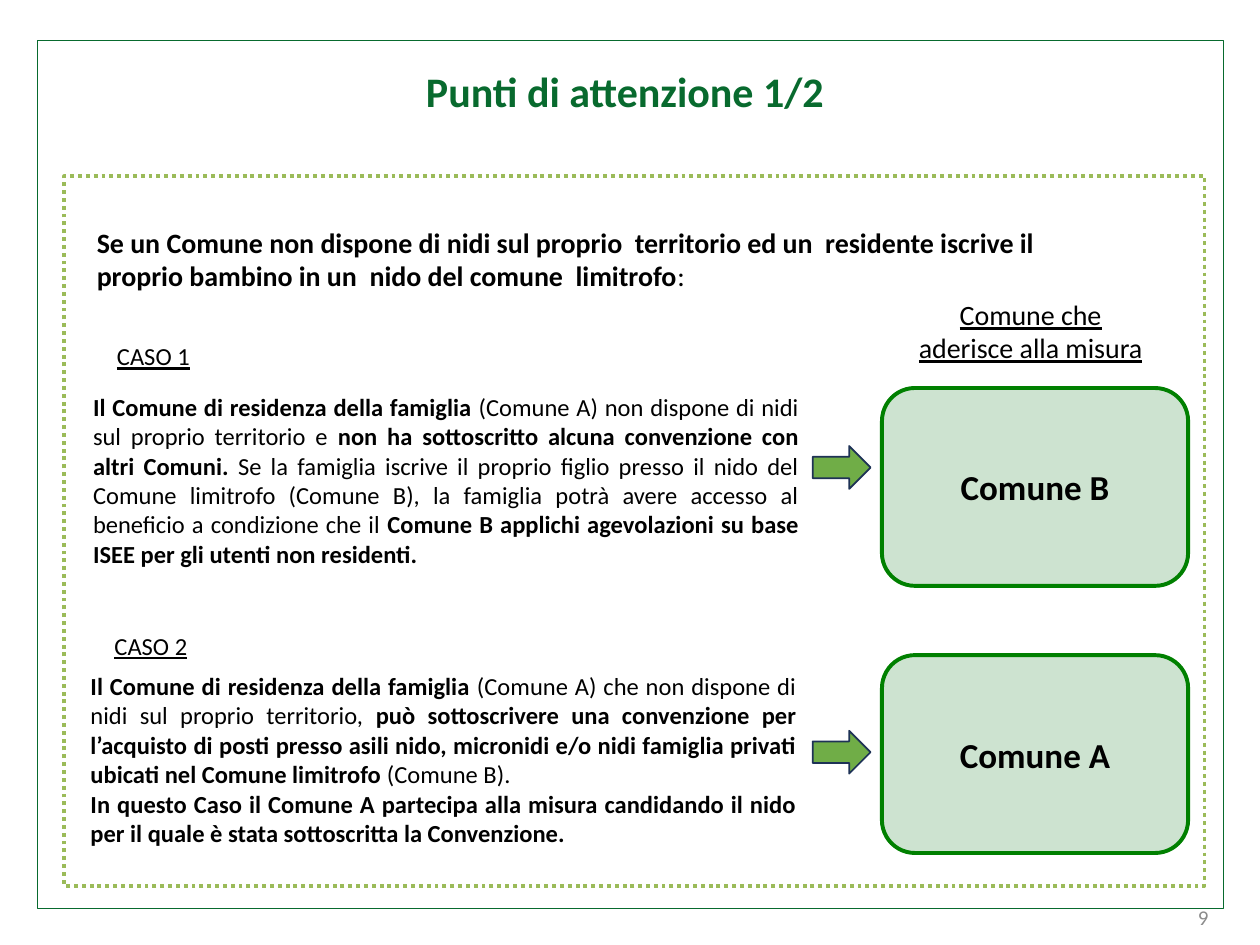
from pptx import Presentation
from pptx.dml.color import RGBColor
from pptx.enum import dml, shapes, text
from pptx.oxml.ns import qn
from pptx.util import Inches, Pt
from lxml import etree

# Content: runs are (text, bold)
TITLE = "Punti di attenzione 1/2"
PAGE_NUMBER = "9"
PREMISE = [
    ("Se un Comune non dispone di nidi sul proprio  territorio ed un  residente iscrive "
     "il  proprio bambino in un  nido del comune  limitrofo", True),
    (":", False),
]
OUTCOME_HEADING = "Comune che aderisce alla misura"
CASES = [
    {
        "label": "CASO 1", "outcome": "Comune B", "gap": 12,
        "text_at": (0.44, 2.66, 6, 1.92), "arrow_top": 3.54, "outcome_top": 3.08,
        "paragraphs": [[
            ("Il Comune di residenza della famiglia", True),
            (" (Comune A) non dispone di nidi sul proprio territorio e ", False),
            ("non ha sottoscritto alcuna convenzione con altri Comuni.", True),
            (" Se la famiglia iscrive il proprio figlio presso il nido del Comune limitrofo "
             "(Comune B), la famiglia potrà avere accesso al beneficio a condizione che il ", False),
            ("Comune B applichi agevolazioni su base ISEE per gli utenti non residenti.", True),
        ]],
    },
    {
        "label": "CASO 2", "outcome": "Comune A", "gap": 6,
        "text_at": (0.42, 4.96, 6, 1.83), "arrow_top": 5.8, "outcome_top": 5.2,
        "paragraphs": [
            [
                ("Il Comune di residenza della famiglia", True),
                (" (Comune A) che non dispone di nidi sul proprio territorio, ", False),
                ("può sottoscrivere una convenzione per l’acquisto di posti presso asili nido, "
                 "micronidi e/o nidi famiglia privati ubicati nel Comune limitrofo", True),
                (" (Comune B).", False),
            ],
            [("In questo Caso il Comune A partecipa alla misura candidando il nido "
              "per il quale è stata sottoscritta la Convenzione.", True)],
        ],
    },
]

THEME = {
    "font": "Calibri",
    "title": "086A2E", "text": "000000", "number": "8C8C8C",
    "white": "FFFFFF", "dotted": "9BBB59",
    "outcome_fill": "077515", "outcome_line": "008000",
    "arrow_fill": "70AD47", "arrow_line": "1E3256",
    "title_size": 24, "outcome_size": 20, "lead_size": 16, "case_size": 14, "number_size": 12,
}
SHAPE = shapes.MSO_SHAPE
ALIGN = text.PP_ALIGN
ANCHOR = text.MSO_ANCHOR
BODY_INDENT, LABEL_INDENT = 0.2, 0.39

presentation = Presentation()
presentation.slide_width, presentation.slide_height = Inches(10), Inches(7.5)
slide = presentation.slides.add_slide(presentation.slide_layouts[5])


def color(name):
    return RGBColor.from_string(THEME[name])


def place(shape, at):
    shape.left, shape.top, shape.width, shape.height = map(Inches, at)


def add_box(kind, at, line, line_width, fill=None, opacity=None):
    shape = slide.shapes.add_shape(kind, *map(Inches, at))
    shape.shadow.inherit = False
    shape.line.color.rgb = color(line)
    shape.line.width = Pt(line_width)
    if fill is None:
        shape.fill.background()
        return shape
    shape.fill.solid()
    shape.fill.fore_color.rgb = color(fill)
    if opacity is not None:
        rgb = shape.fill._xPr.find(qn("a:solidFill"))[0]
        etree.SubElement(rgb, qn("a:alpha"), val=str(opacity * 1000))
    return shape


def add_text_box(at, anchor=ANCHOR.TOP):
    frame = slide.shapes.add_textbox(*map(Inches, at)).text_frame
    frame.word_wrap = True
    frame.vertical_anchor = anchor
    return frame


def write(paragraph, runs, size, ink="text", align=ALIGN.LEFT, indent=0, **style):
    """Fill a paragraph with (text, bold) runs and format it."""
    paragraph.alignment = align
    if indent:
        properties = paragraph._p.get_or_add_pPr()
        properties.set("marL", str(Inches(indent)))
        properties.set("indent", "0")
    font = paragraph.font
    font.name, font.size, font.color.rgb = THEME["font"], Pt(THEME[size]), color(ink)
    for name, value in style.items():
        setattr(font, name, value)
    for words, bold in runs:
        run = paragraph.add_run()
        run.text = words
        run.font.bold = bold


# Frame, page number and title
add_box(SHAPE.RECTANGLE, (0.3, 0.32, 9.41, 6.89), "title", 0.5)
number = add_text_box((7.44, 7.08, 2.25, 0.4), ANCHOR.MIDDLE)
write(number.paragraphs[0], [(PAGE_NUMBER, False)], "number_size", "number", ALIGN.RIGHT)

title = slide.shapes.title
place(title, (0.48, 0.47, 8.96, 0.5))
title.text_frame.auto_size = text.MSO_AUTO_SIZE.NONE
title.text_frame.vertical_anchor = ANCHOR.TOP
write(title.text_frame.paragraphs[0], [(TITLE, True)], "title_size", "title", ALIGN.CENTER)

# Dotted panel with the premise and the heading of the outcome column
panel = add_box(SHAPE.RECTANGLE, (0.51, 1.4, 9.05, 5.63), "dotted", 2.25, "white")
panel.line.dash_style = dml.MSO_LINE.ROUND_DOT
premise = add_text_box((0.47, 1.74, 8, 0.64))
write(premise.paragraphs[0], PREMISE, "lead_size", indent=BODY_INDENT)
heading = add_text_box((6.77, 2.31, 2.43, 0.64))
write(heading.paragraphs[0], [(OUTCOME_HEADING, False)], "lead_size",
      align=ALIGN.CENTER, indent=LABEL_INDENT, underline=True)

# Each case: explanation, arrow, outcome
for case in CASES:
    frame = add_text_box(case["text_at"])
    label = frame.paragraphs[0]
    write(label, [(case["label"], False)], "case_size",
          align=ALIGN.JUSTIFY, indent=LABEL_INDENT, underline=True)
    label.space_after = Pt(case["gap"])
    for runs in case["paragraphs"]:
        write(frame.add_paragraph(), runs, "case_size", align=ALIGN.JUSTIFY, indent=BODY_INDENT)

    add_box(SHAPE.RIGHT_ARROW, (6.45, case["arrow_top"], 0.46, 0.34),
            "arrow_line", 1, "arrow_fill")
    outcome = add_box(SHAPE.ROUNDED_RECTANGLE, (7, case["outcome_top"], 2.43, 1.57),
                      "outcome_line", 2.25, "outcome_fill", opacity=20)
    outcome.text_frame.vertical_anchor = ANCHOR.MIDDLE
    write(outcome.text_frame.paragraphs[0], [(case["outcome"], True)], "outcome_size",
          align=ALIGN.CENTER)

presentation.save("out.pptx")
